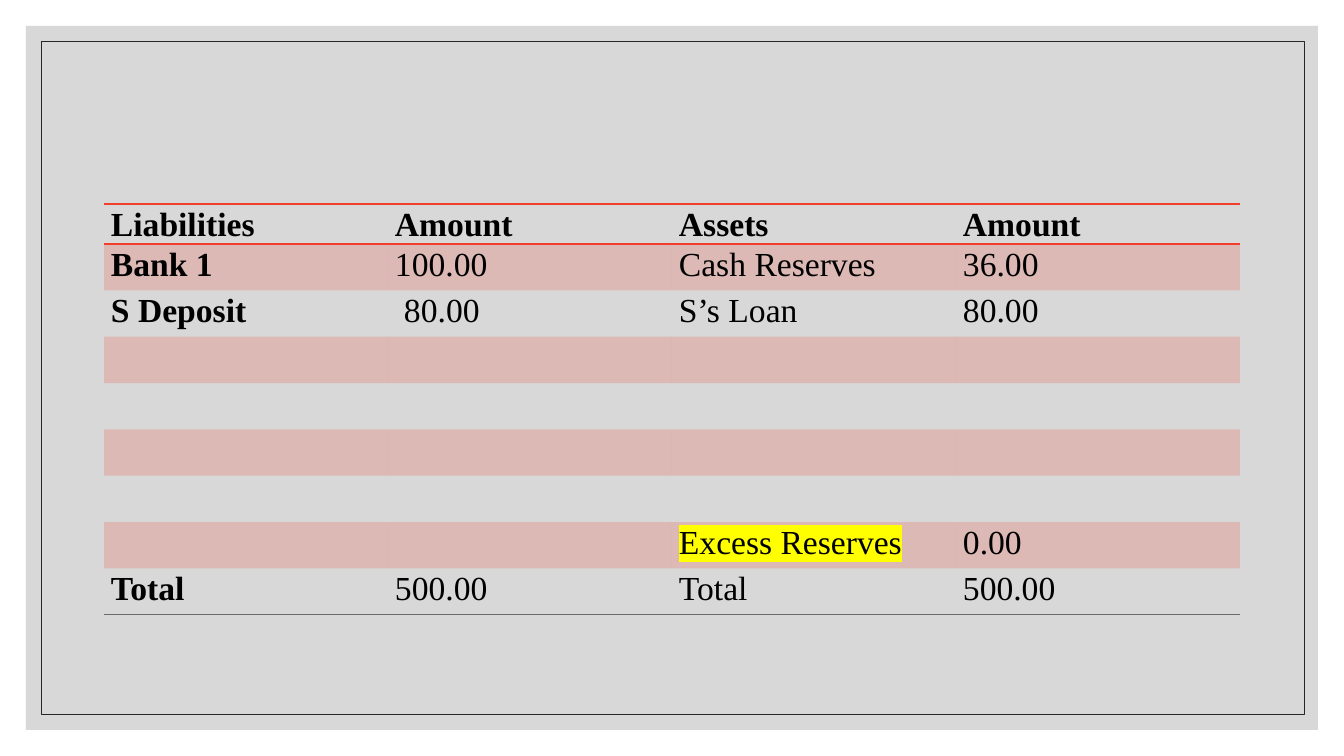
from pptx import Presentation
from pptx.dml.color import RGBColor
from pptx.enum.shapes import MSO_SHAPE
from pptx.oxml import parse_xml
from pptx.oxml.ns import nsdecls, qn
from pptx.util import Emu, Pt
from lxml import etree

RECTANGLE = MSO_SHAPE.RECTANGLE
COLORS = {
    "panel": "BFBFBF",
    "frame": "262626",
    "text": "000000",
    "accent": "F03F2B",
    "total_line": "6B6B6B",
    "highlight": "FFFF00",
}
FONT = "Times New Roman"
BLANK_LAYOUT = 6


def px(value):
    return Emu(round(value * 914400 / 100.8))


def tint(fill, color, opacity):
    """Fill with a solid colour at an opacity given in percent."""
    fill.solid()
    fill.fore_color.rgb = RGBColor.from_string(COLORS[color])
    color_element = fill._xPr.find(qn("a:solidFill"))[0]
    etree.SubElement(color_element, qn("a:alpha"), val=str(opacity * 1000))


deck = Presentation()
deck.slide_width, deck.slide_height = px(1344), px(756)
page = deck.slides.add_slide(deck.slide_layouts[BLANK_LAYOUT])

# Background panel and thin frame
panel = page.shapes.add_shape(RECTANGLE, px(26), px(26), px(1292), px(704))
panel.shadow.inherit = False
tint(panel.fill, "panel", 60)
panel.line.fill.background()

frame = page.shapes.add_shape(RECTANGLE, px(41), px(41), px(1263), px(673))
frame.shadow.inherit = False
frame.fill.background()
frame.line.color.rgb = RGBColor.from_string(COLORS["frame"])
frame.line.width = Pt(0.5)

# Balance sheet
EMPTY_ROW = ("", "", "", "")
balance_rows = [
    ("Liabilities", "Amount", "Assets", "Amount"),
    ("Bank 1", "100.00", "Cash Reserves", "36.00"),
    ("S Deposit", "80.00", "S’s Loan", "80.00"),
    EMPTY_ROW,
    EMPTY_ROW,
    EMPTY_ROW,
    EMPTY_ROW,
    ("", "", "Excess Reserves", "0.00"),
    ("Total", "500.00", "Total", "500.00"),
]
last_row = len(balance_rows) - 1
table_height, header_height = 411, 40
row_height = (table_height - header_height) / last_row
ruled_sides = {
    (0, "lnT"): "accent",
    (0, "lnB"): "accent",
    (1, "lnT"): "accent",
    (last_row, "lnB"): "total_line",
}

balance_frame = page.shapes.add_table(
    len(balance_rows), 4, px(104), px(204), px(1136), px(table_height))
balance = balance_frame.table
balance.first_row = False
balance.horz_banding = False

for column in balance.columns:
    column.width = px(284)

for row_index, labels in enumerate(balance_rows):
    balance.rows[row_index].height = px(row_height if row_index else header_height)
    for column_index, label in enumerate(labels):
        cell = balance.cell(row_index, column_index)
        cell.margin_left = cell.margin_right = px(7)
        cell.margin_top = cell.margin_bottom = px(0)
        if (row_index, column_index) == (2, 1):
            cell.margin_left = px(16)
        if row_index % 2:
            tint(cell.fill, "accent", 20)
        else:
            cell.fill.background()

        cell_properties = cell._tc.get_or_add_tcPr()
        for position, side in enumerate(("lnL", "lnR", "lnT", "lnB")):
            color = ruled_sides.get((row_index, side))
            paint = "<a:noFill/>"
            if color:
                paint = f'<a:solidFill><a:srgbClr val="{COLORS[color]}"/></a:solidFill>'
            cell_properties.insert(position, parse_xml(
                f'<a:{side} {nsdecls("a")} w="12700">{paint}</a:{side}>'))

        if not label:
            continue
        para = cell.text_frame.paragraphs[0]
        para.line_spacing = 1.07
        para.space_after = Pt(8)
        span = para.add_run()
        span.text = label
        span.font.size = Pt(24)
        span.font.bold = row_index == 0 or column_index == 0
        span.font.color.rgb = RGBColor.from_string(COLORS["text"])
        if label == "Excess Reserves":
            highlight = etree.SubElement(span.font._element, qn("a:highlight"))
            etree.SubElement(highlight, qn("a:srgbClr"), val=COLORS["highlight"])
        span.font.name = FONT

deck.save("out.pptx")
